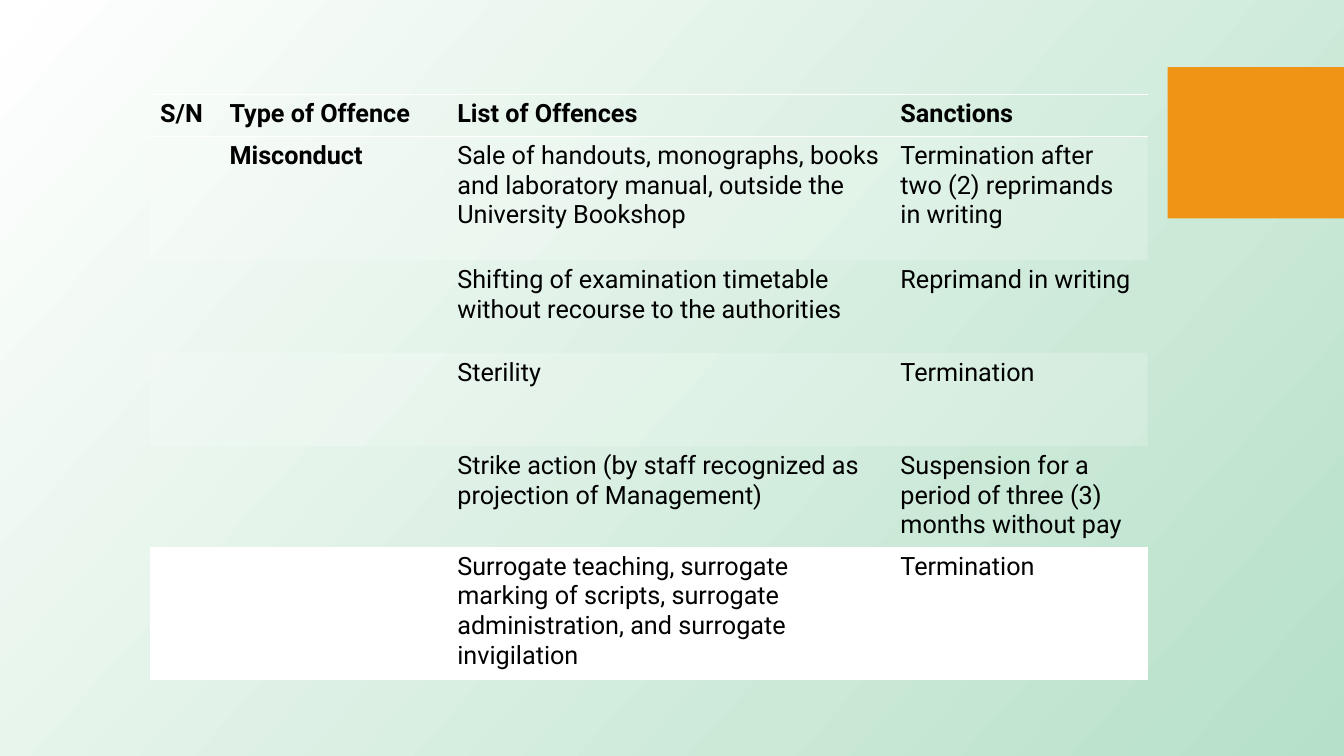
from dataclasses import dataclass

from lxml.etree import SubElement
from pptx import Presentation
from pptx.dml.color import RGBColor
from pptx.enum.shapes import MSO_SHAPE
from pptx.oxml.ns import qn
from pptx.util import Pt

EMU_PER_PX = 9525
NO_GRID_STYLE = "{2D5ABB26-0587-4C30-8999-92F81FD0307C}"


@dataclass(frozen=True)
class Theme:
    white: str = "FFFFFF"
    green: str = "B6E0C7"
    orange: str = "F09415"
    text: str = "000000"
    font: str = "Roboto"
    text_size: int = 18
    border_width: int = 1
    band_opacity: int = 20


THEME = Theme()

COLUMN_WIDTHS = [66, 217, 422, 245]
ROW_HEIGHTS = [40, 118, 88, 89, 96, 126]
OFFENCES = [
    ("S/N", "Type of Offence", "List of Offences", "Sanctions"),
    ("", "Misconduct",
     "Sale of handouts, monographs, books and laboratory manual, outside the University Bookshop",
     "Termination after two (2) reprimands in writing"),
    ("", "", "Shifting of examination timetable without recourse to the authorities",
     "Reprimand in writing"),
    ("", "", "Sterility", "Termination"),
    ("", "", "Strike action (by staff recognized as projection of Management)",
     "Suspension for a period of three (3) months without pay"),
    ("", "",
     "Surrogate teaching, surrogate marking of scripts, surrogate administration, and surrogate invigilation",
     "Termination"),
]


def px(length):
    return length * EMU_PER_PX


def color(value):
    return RGBColor.from_string(value)


def paint_background(slide):
    fill = slide.background.fill
    fill.gradient()
    fill.gradient_angle = 318
    for stop, position, value in zip(fill.gradient_stops, (0, 1), (THEME.white, THEME.green)):
        stop.position = position
        stop.color.rgb = color(value)


def add_block(slide, left, top, width, height):
    shape = slide.shapes.add_shape(
        MSO_SHAPE.RECTANGLE, px(left), px(top), px(width), px(height))
    shape.shadow.inherit = False
    shape.fill.solid()
    shape.fill.fore_color.rgb = color(THEME.orange)
    shape.line.fill.background()


def add_border(cell, side):
    properties = cell._tc.get_or_add_tcPr()
    line = SubElement(properties, qn(f"a:{side}"), w=str(Pt(THEME.border_width)))
    solid = SubElement(line, qn("a:solidFill"))
    SubElement(solid, qn("a:srgbClr"), val=THEME.white)


def fill_cell(cell, banded):
    if not banded:
        cell.fill.background()
        return
    cell.fill.solid()
    cell.fill.fore_color.rgb = color(THEME.white)
    tint = cell._tc.tcPr.find(".//" + qn("a:srgbClr"))
    SubElement(tint, qn("a:alpha"), val=str(THEME.band_opacity * 1000))


def write_cell(cell, text, bold):
    cell.text_frame.text = text
    font = cell.text_frame.paragraphs[0].font
    font.size = Pt(THEME.text_size)
    for run in cell.text_frame.paragraphs[0].runs:
        run.font.name = THEME.font
        run.font.size = Pt(THEME.text_size)
        run.font.bold = bold
        run.font.color.rgb = color(THEME.text)


def add_offence_table(slide, left, top):
    frame = slide.shapes.add_table(
        len(OFFENCES), len(COLUMN_WIDTHS), px(left), px(top),
        px(sum(COLUMN_WIDTHS)), px(sum(ROW_HEIGHTS)))
    table = frame.table
    table.first_row = False
    table.horz_banding = False
    table._tbl.tblPr.find(qn("a:tableStyleId")).text = NO_GRID_STYLE
    for column, width in zip(table.columns, COLUMN_WIDTHS):
        column.width = px(width)
    for row, height in zip(table.rows, ROW_HEIGHTS):
        row.height = px(height)
    last_row = len(OFFENCES) - 1
    for row_index, texts in enumerate(OFFENCES):
        for column_index, text in enumerate(texts):
            cell = table.cell(row_index, column_index)
            write_cell(cell, text, row_index == 0 or column_index < 2)
            if row_index == 0:
                add_border(cell, "lnT")
            if row_index in (0, last_row):
                add_border(cell, "lnB")
            fill_cell(cell, row_index % 2 == 1)


def main():
    presentation = Presentation()
    presentation.slide_width = px(1280)
    presentation.slide_height = px(720)
    slide = presentation.slides.add_slide(presentation.slide_layouts[6])
    paint_background(slide)
    add_block(slide, 1112, 64, 168, 144)
    add_offence_table(slide, 143, 90)
    presentation.save("out.pptx")


if __name__ == "__main__":
    main()
